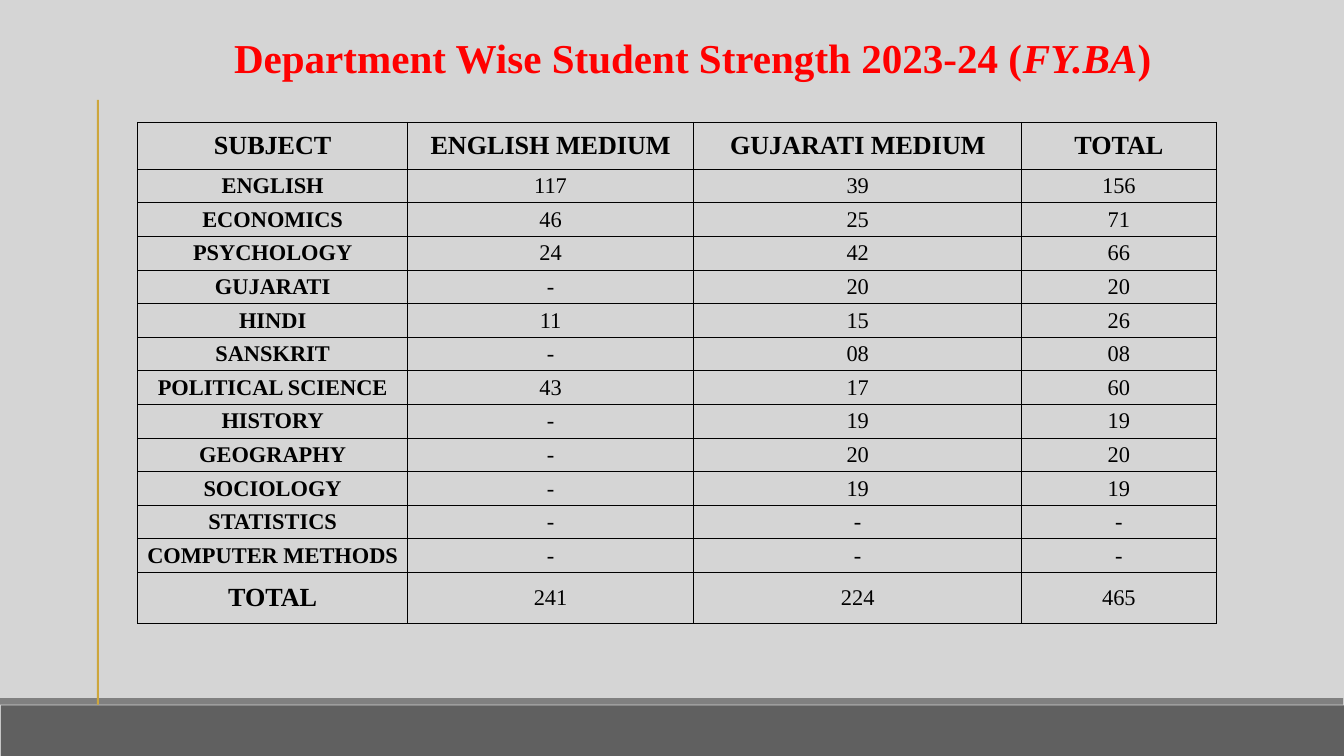
"""Build the slide with the department wise student strength table."""
from lxml import etree
from pptx import Presentation
from pptx.dml.color import RGBColor
from pptx.enum.shapes import MSO_SHAPE
from pptx.enum.text import MSO_ANCHOR, PP_ALIGN
from pptx.oxml.ns import qn
from pptx.util import Cm, Pt

RECTANGLE = MSO_SHAPE.RECTANGLE
MIDDLE = MSO_ANCHOR.MIDDLE
CENTER = PP_ALIGN.CENTER

BACKGROUND = RGBColor(0xD5, 0xD5, 0xD5)
DARK_GREY = RGBColor(0x60, 0x60, 0x60)
MID_GREY = RGBColor(0x80, 0x80, 0x80)
GOLD = RGBColor(0xCD, 0xA6, 0x3C)
RED = RGBColor(0xFF, 0x00, 0x00)
BLACK = RGBColor(0x00, 0x00, 0x00)

FONT = "Times New Roman"
SLIDE_SIZE = (50.8, 28.58)
BARS = [
    ((0.03, 26.67, 50.77, 1.91), DARK_GREY),
    ((0, 26.39, 50.77, 0.25), MID_GREY),
    ((3.66, 3.78, 0.08, 22.86), GOLD),
]
TITLE_BOX = (6.38, 1.09, 39.6, 2.13)
TITLE_RUNS = [
    ("Department Wise Student Strength 2023-24 (", False),
    ("FY.BA", True),
    (")", False),
]

TABLE_ORIGIN = (5.21, 4.62)
COLUMN_WIDTHS = [10.19, 10.82, 12.4, 7.34]
HEADER_HEIGHT, SUBJECT_HEIGHT, TOTAL_HEIGHT = 1.78, 1.27, 1.93
HEADER = ("SUBJECT", "ENGLISH MEDIUM", "GUJARATI MEDIUM", "TOTAL")
SUBJECTS = [
    ("ENGLISH", "117", "39", "156"),
    ("ECONOMICS", "46", "25", "71"),
    ("PSYCHOLOGY", "24", "42", "66"),
    ("GUJARATI", "-", "20", "20"),
    ("HINDI", "11", "15", "26"),
    ("SANSKRIT", "-", "08", "08"),
    ("POLITICAL SCIENCE", "43", "17", "60"),
    ("HISTORY", "-", "19", "19"),
    ("GEOGRAPHY", "-", "20", "20"),
    ("SOCIOLOGY", "-", "19", "19"),
    ("STATISTICS", "-", "-", "-"),
    ("COMPUTER METHODS", "-", "-", "-"),
]
TOTALS = ("TOTAL", "241", "224", "465")

CELL_FORMAT = {
    "vertical_anchor": MIDDLE,
    "margin_left": Cm(0.2),
    "margin_right": Cm(0.2),
    "margin_top": Cm(0.1),
    "margin_bottom": Cm(0.1),
}


def apply_format(target, values):
    for name, value in values.items():
        setattr(target, name, value)


def add_run(paragraph, text, size, color, bold, italic=False):
    paragraph.alignment = CENTER
    run = paragraph.add_run()
    run.text = text
    apply_format(run.font, {"name": FONT, "size": Pt(size), "bold": bold, "italic": italic})
    run.font.color.rgb = color


def add_bar(slide, box, color):
    bar = slide.shapes.add_shape(RECTANGLE, *map(Cm, box))
    bar.shadow.inherit = False
    bar.fill.solid()
    bar.fill.fore_color.rgb = color
    bar.line.fill.background()


def format_title(title):
    apply_format(title, dict(zip(("left", "top", "width", "height"), map(Cm, TITLE_BOX))))
    apply_format(title.text_frame, {"word_wrap": True, "vertical_anchor": MIDDLE})
    for text, italic in TITLE_RUNS:
        add_run(title.text_frame.paragraphs[0], text, 44, RED, True, italic)


def add_borders(cell):
    properties = cell._tc.get_or_add_tcPr()
    for side in ("a:lnL", "a:lnR", "a:lnT", "a:lnB"):
        line = etree.SubElement(properties, qn(side), w=str(Pt(1)))
        fill = etree.SubElement(line, qn("a:solidFill"))
        etree.SubElement(fill, qn("a:srgbClr"), val=str(BLACK))


def add_strength_table(slide):
    rows = [HEADER, *SUBJECTS, TOTALS]
    heights = [HEADER_HEIGHT] + [SUBJECT_HEIGHT] * len(SUBJECTS) + [TOTAL_HEIGHT]
    size = (sum(COLUMN_WIDTHS), sum(heights))
    table = slide.shapes.add_table(
        len(rows), len(HEADER), *map(Cm, TABLE_ORIGIN + size)
    ).table
    apply_format(table, {"first_row": False, "horz_banding": False})
    for column, width in zip(table.columns, COLUMN_WIDTHS):
        column.width = Cm(width)
    for row, height, texts in zip(table.rows, heights, rows):
        row.height = Cm(height)
        for index, (cell, text) in enumerate(zip(row.cells, texts)):
            is_label = index == 0
            is_large = texts is HEADER or (texts is TOTALS and is_label)
            apply_format(cell, CELL_FORMAT)
            add_borders(cell)
            cell.fill.background()
            add_run(
                cell.text_frame.paragraphs[0],
                text,
                28 if is_large else 24,
                BLACK,
                is_large or is_label,
            )


def main():
    presentation = Presentation()
    presentation.slide_width, presentation.slide_height = map(Cm, SLIDE_SIZE)
    slide = presentation.slides.add_slide(presentation.slide_layouts[5])
    slide.background.fill.solid()
    slide.background.fill.fore_color.rgb = BACKGROUND
    for box, color in BARS:
        add_bar(slide, box, color)
    format_title(slide.shapes.title)
    add_strength_table(slide)
    presentation.save("out.pptx")


if __name__ == "__main__":
    main()
